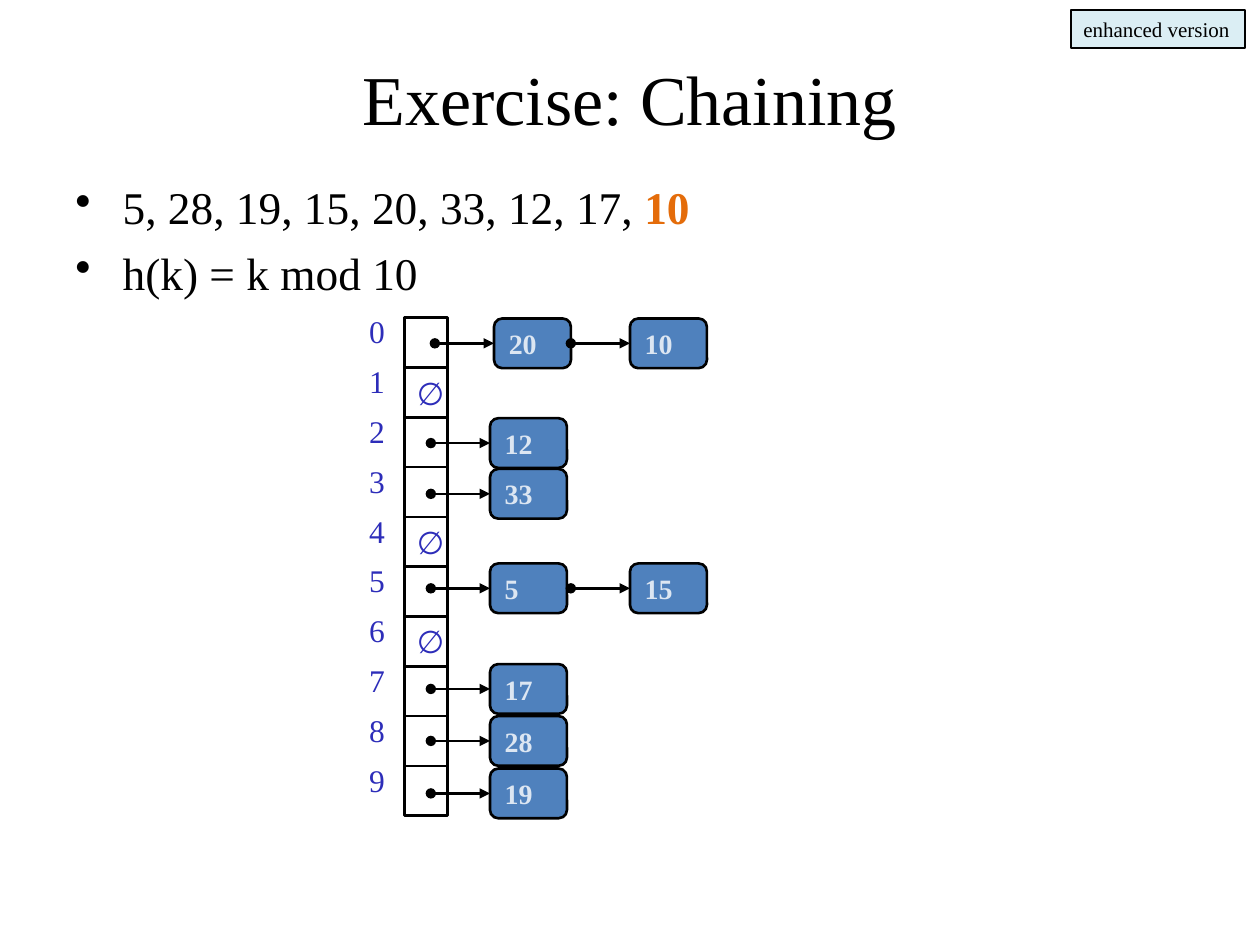
from lxml.etree import SubElement
from pptx import Presentation
from pptx.dml.color import RGBColor
from pptx.enum.shapes import MSO_CONNECTOR as CONN, MSO_SHAPE as SHAPE
from pptx.enum.text import MSO_ANCHOR as ANCHOR, PP_ALIGN as ALIGN
from pptx.oxml.ns import qn
from pptx.util import Pt

# Content
TITLE = "Exercise: Chaining"
TAG = "enhanced version"
KEYS, NEW_KEY = "5, 28, 19, 15, 20, 33, 12, 17, ", "10"
HASH = "h(k) = k mod 10"
EMPTY = "∅"
SLOTS = 10
# slot: (left of first node, top of nodes, chained keys)
CHAINS = {
    0: (282.3, 182, ["20", "10"]),
    2: (280, 239, ["12"]),
    3: (280, 268, ["33"]),
    5: (280, 322, ["5", "15"]),
    7: (280, 379.5, ["17"]),
    8: (280, 409.2, ["28"]),
    9: (280, 439.2, ["19"]),
}

# Style
BLACK = RGBColor(0x00, 0x00, 0x00)
ORANGE = RGBColor(0xE4, 0x6C, 0x0A)
INDIGO = RGBColor(0x2D, 0x2D, 0xB9)
BLUE = RGBColor(0x4F, 0x81, 0xBD)
PALE_BLUE = RGBColor(0xDC, 0xE6, 0xF2)
PALE_TEAL = RGBColor(0xDB, 0xEE, 0xF4)
SERIF, SANS = "Times New Roman", "Calibri"

# Layout
SLOT_X, SLOT_Y, SLOT_W, PITCH = 231.2, 181.6, 24.5, 28.45
LABEL_X, LABEL_Y = 203.8, 175
NODE_W, NODE_H, SECOND_X, ARROW_W = 44, 28.4, 360, 33.8

prs = Presentation()
prs.slide_width, prs.slide_height = Pt(720), Pt(540)
s = prs.slides.add_slide(prs.slide_layouts[6])


def set_font(p, size, color, name=SERIF, bold=False):
    p.font.size, p.font.name, p.font.bold = Pt(size), name, bold
    p.font.color.rgb = color


def add_text(x, y, w, h, text, size, color, wrap=False):
    sp = s.shapes.add_textbox(Pt(x), Pt(y), Pt(w), Pt(h))
    tf = sp.text_frame
    tf.word_wrap = wrap
    tf.text = text
    set_font(tf.paragraphs[0], size, color)
    return tf


def add_box(kind, x, y, w, h, fill=None, line=1.5, text="", **font):
    sp = s.shapes.add_shape(kind, Pt(x), Pt(y), Pt(w), Pt(h))
    sp.shadow.inherit = False
    if fill is None:
        sp.fill.background()
    else:
        sp.fill.solid()
        sp.fill.fore_color.rgb = fill
    sp.line.color.rgb, sp.line.width = BLACK, Pt(line)
    if text:
        tf = sp.text_frame
        tf.word_wrap, tf.vertical_anchor = False, ANCHOR.MIDDLE
        p = tf.paragraphs[0]
        p.text, p.alignment = text, ALIGN.LEFT
        set_font(p, **font)


def add_arrow(x1, x2, y):
    c = s.shapes.add_connector(CONN.STRAIGHT, Pt(x1), Pt(y), Pt(x2), Pt(y))
    c.line.color.rgb, c.line.width = BLACK, Pt(1.5)
    ln = c.line._get_or_add_ln()
    SubElement(ln, qn("a:headEnd"), type="oval")
    SubElement(ln, qn("a:tailEnd"), type="triangle")
    SubElement(c._element.spPr, qn("a:effectLst"))


# Title
tf = add_text(36, 21.6, 648, 68.4, TITLE, 40, BLACK, wrap=True)
tf.vertical_anchor = ANCHOR.MIDDLE
tf.paragraphs[0].alignment = ALIGN.CENTER

# Bullets
tf = add_text(36, 95.8, 648, 66.2, KEYS, 25.9, BLACK, wrap=True)
tf.margin_top = Pt(6.8)
r = tf.paragraphs[0].add_run()
r.text, r.font.bold, r.font.color.rgb = NEW_KEY, True, ORANGE
p = tf.add_paragraph()
p.text, p.space_before = HASH, Pt(6.5)
set_font(p, 25.9, BLACK)
for p in tf.paragraphs:
    pPr = p._p.get_or_add_pPr()
    pPr.set("marL", str(Pt(27)))
    pPr.set("indent", str(-Pt(27)))
    bullet = pPr.makeelement(qn("a:buChar"), {"char": "•"})
    pPr.find(qn("a:defRPr")).addprevious(bullet)

# Hash table slots with their indices
for i in range(SLOTS):
    add_text(LABEL_X, LABEL_Y + i * PITCH, 24, 29, str(i), 18, INDIGO)
    add_box(SHAPE.RECTANGLE, SLOT_X, SLOT_Y + i * PITCH, SLOT_W, PITCH,
            text="" if i in CHAINS else EMPTY, size=18, color=INDIGO, name=SANS)

# Chains of nodes, each node with its incoming arrow
for first_x, y, keys in CHAINS.values():
    for x, key in zip((first_x, SECOND_X), keys):
        add_box(SHAPE.ROUNDED_RECTANGLE, x, y, NODE_W, NODE_H, BLUE,
                text=key, size=16, color=PALE_BLUE, bold=True)
        add_arrow(x - ARROW_W, x, y + NODE_H / 2)

# Version tag
add_box(SHAPE.RECTANGLE, 612, 5.8, 99.4, 21.6, PALE_TEAL, 0.75,
        text=TAG, size=12, color=BLACK)

prs.save("out.pptx")
